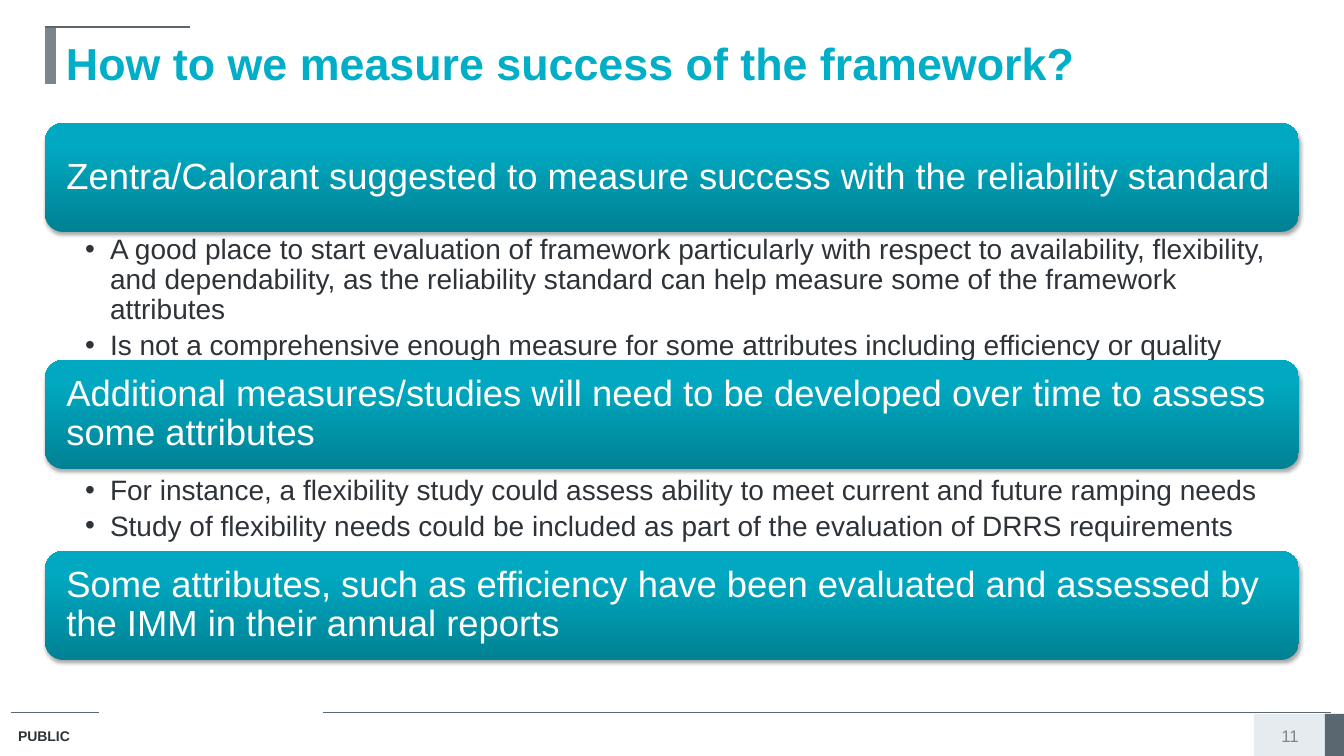
from dataclasses import dataclass

import lxml.etree
import pptx
import pptx.dml.color
import pptx.enum.shapes
import pptx.enum.text
import pptx.oxml
import pptx.oxml.ns
import pptx.util

EMU_PER_PX = 914400 / 100.8
FONT = "Arial"
COLORS = {
    "title": "00AEC7",
    "text": "2D3338",
    "white": "FFFFFF",
    "rule": "5B6770",
    "gray": "7C858C",
    "pale": "E6EBF0",
    "banner_low": "008294",
    "banner_mid": "00A9C1",
    "banner_high": "00A9C2",
    "shadow": "000000",
}
NS = pptx.oxml.ns.nsdecls("a")
ANCHOR = pptx.enum.text.MSO_ANCHOR
ALIGN = pptx.enum.text.PP_ALIGN
SHAPE = pptx.enum.shapes.MSO_SHAPE

BANNER_GRADIENT = (
    f'<a:gradFill {NS} rotWithShape="1"><a:gsLst>'
    f'<a:gs pos="0"><a:srgbClr val="{COLORS["banner_low"]}"/></a:gs>'
    f'<a:gs pos="80000"><a:srgbClr val="{COLORS["banner_mid"]}"/></a:gs>'
    f'<a:gs pos="100000"><a:srgbClr val="{COLORS["banner_high"]}"/></a:gs>'
    '</a:gsLst><a:lin ang="16200000" scaled="0"/></a:gradFill>'
)
BANNER_SHADOW = (
    f'<a:effectLst {NS}><a:outerShdw blurRad="39400" dist="22900" dir="5400000" rotWithShape="0">'
    f'<a:srgbClr val="{COLORS["shadow"]}"><a:alpha val="35000"/></a:srgbClr>'
    '</a:outerShdw></a:effectLst>'
)


@dataclass
class Box:
    left: int
    top: int
    width: int
    height: int


@dataclass
class Block:
    color: str
    box: Box


@dataclass
class Rule:
    left: int
    right: int
    top: int


@dataclass
class Banner:
    top: int
    text: str


@dataclass
class BulletList:
    box: Box
    margins: tuple[int, int, int, int]
    items: list[str]


BLOCKS = [
    Block("pale", Box(1254, 714, 79, 42)),
    Block("rule", Box(1325, 714, 19, 42)),
    Block("gray", Box(45, 27, 11, 57)),
]
RULES = [Rule(11, 99, 713), Rule(323, 1331, 713), Rule(45, 190, 27)]
BANNERS = [
    Banner(123, "Zentra/Calorant suggested to measure success with the reliability standard"),
    Banner(360, "Additional measures/studies will need to be developed over time to assess some attributes"),
    Banner(551, "Some attributes, such as efficiency have been evaluated and assessed by the IMM "
                "in their annual reports"),
]
LISTS = [
    BulletList(Box(45, 232, 1254, 130), (40, 3, 16, 3), [
        "A good place to start evaluation of framework particularly with respect to availability, "
        "flexibility, and dependability, as the reliability standard can help measure some of the "
        "framework attributes",
        "Is not a comprehensive enough measure for some attributes including efficiency or quality",
    ]),
    BulletList(Box(45, 472, 1254, 73), (40, 4, 20, 4), [
        "For instance, a flexibility study could assess ability to meet current and future ramping needs",
        "Study of flexibility needs could be included as part of the evaluation of DRRS requirements",
    ]),
]


def px(length: int) -> pptx.util.Emu:
    return pptx.util.Emu(round(length * EMU_PER_PX))


def rgb(name: str) -> pptx.dml.color.RGBColor:
    return pptx.dml.color.RGBColor.from_string(COLORS[name])


def place(shape, box: Box) -> None:
    shape.left, shape.top = px(box.left), px(box.top)
    shape.width, shape.height = px(box.width), px(box.height)


def set_frame(frame, margins: tuple[int, int, int, int], anchor) -> None:
    """Set wrapping, anchoring and left, top, right, bottom margins."""
    frame.word_wrap = True
    frame.auto_size = pptx.enum.text.MSO_AUTO_SIZE.NONE
    frame.vertical_anchor = anchor
    frame.margin_left, frame.margin_top, frame.margin_right, frame.margin_bottom = map(px, margins)


def format_paragraph(paragraph, size: int, color: str, bold: bool = False, align=ALIGN.LEFT) -> None:
    paragraph.alignment = align
    for run in paragraph.runs:
        run.font.name = FONT
        run.font.size = pptx.util.Pt(size)
        run.font.bold = bold
        run.font.color.rgb = rgb(color)


def add_block(slide, block: Block) -> None:
    shape = slide.shapes.add_shape(SHAPE.RECTANGLE, 0, 0, 0, 0)
    place(shape, block.box)
    shape.shadow.inherit = False
    shape.fill.solid()
    shape.fill.fore_color.rgb = rgb(block.color)
    shape.line.fill.background()


def add_rule(slide, rule: Rule) -> None:
    line = slide.shapes.add_connector(pptx.enum.shapes.MSO_CONNECTOR.STRAIGHT,
                                      px(rule.left), px(rule.top), px(rule.right), px(rule.top))
    line.line.color.rgb = rgb("rule")
    line.line.width = pptx.util.Pt(0.75)
    lxml.etree.SubElement(line._element.spPr, pptx.oxml.ns.qn("a:effectLst"))


def add_label(slide, box: Box, text: str, size: int, color: str, bold: bool, align, anchor) -> None:
    label = slide.shapes.add_textbox(0, 0, 0, 0)
    place(label, box)
    set_frame(label.text_frame, (10, 5, 10, 5), anchor)
    label.text_frame.text = text
    format_paragraph(label.text_frame.paragraphs[0], size, color, bold, align)


def add_banner(slide, banner: Banner) -> None:
    shape = slide.shapes.add_shape(SHAPE.ROUNDED_RECTANGLE, 0, 0, 0, 0)
    place(shape, Box(45, banner.top, 1254, 109))
    shape.line.fill.background()
    properties = shape._element.spPr
    properties.find(pptx.oxml.ns.qn("a:ln")).addprevious(pptx.oxml.parse_xml(BANNER_GRADIENT))
    properties.append(pptx.oxml.parse_xml(BANNER_SHADOW))
    set_frame(shape.text_frame, (16, 16, 16, 16), ANCHOR.MIDDLE)
    shape.text_frame.text = banner.text
    heading = shape.text_frame.paragraphs[0]
    heading.line_spacing = 0.9
    format_paragraph(heading, 26, "white")


def fill_list(body, bullets: BulletList) -> None:
    place(body, bullets.box)
    set_frame(body.text_frame, bullets.margins, ANCHOR.TOP)
    body.text_frame.text = "\n".join(bullets.items)
    for item in body.text_frame.paragraphs:
        properties = item._p.get_or_add_pPr()
        properties.set("marL", str(px(25)))
        properties.set("indent", str(px(-25)))
        item.line_spacing = 0.9
        item.space_before = pptx.util.Pt(0)
        item.space_after = pptx.util.Pt(4)
        format_paragraph(item, 20, "text")


def fill_title(title) -> None:
    place(title, Box(56, 27, 1243, 57))
    set_frame(title.text_frame, (10, 9, 10, 0), ANCHOR.TOP)
    title.text_frame.text = "How to we measure success of the framework?"
    format_paragraph(title.text_frame.paragraphs[0], 32, "title", bold=True)


def main() -> None:
    presentation = pptx.Presentation()
    presentation.slide_width, presentation.slide_height = px(1344), px(756)
    two_lists_layout = presentation.slide_layouts[3]
    slide = presentation.slides.add_slide(two_lists_layout)
    title, *bodies = slide.placeholders
    fill_title(title)
    for body, bullets in zip(bodies, LISTS):
        fill_list(body, bullets)
    for block in BLOCKS:
        add_block(slide, block)
    for rule in RULES:
        add_rule(slide, rule)
    for banner in BANNERS:
        add_banner(slide, banner)
    add_label(slide, Box(8, 723, 104, 28), "PUBLIC", 10, "text", True, ALIGN.LEFT, ANCHOR.TOP)
    add_label(slide, Box(1254, 724, 72, 24), "11", 12, "gray", False, ALIGN.CENTER, ANCHOR.MIDDLE)
    presentation.save("out.pptx")


if __name__ == "__main__":
    main()
